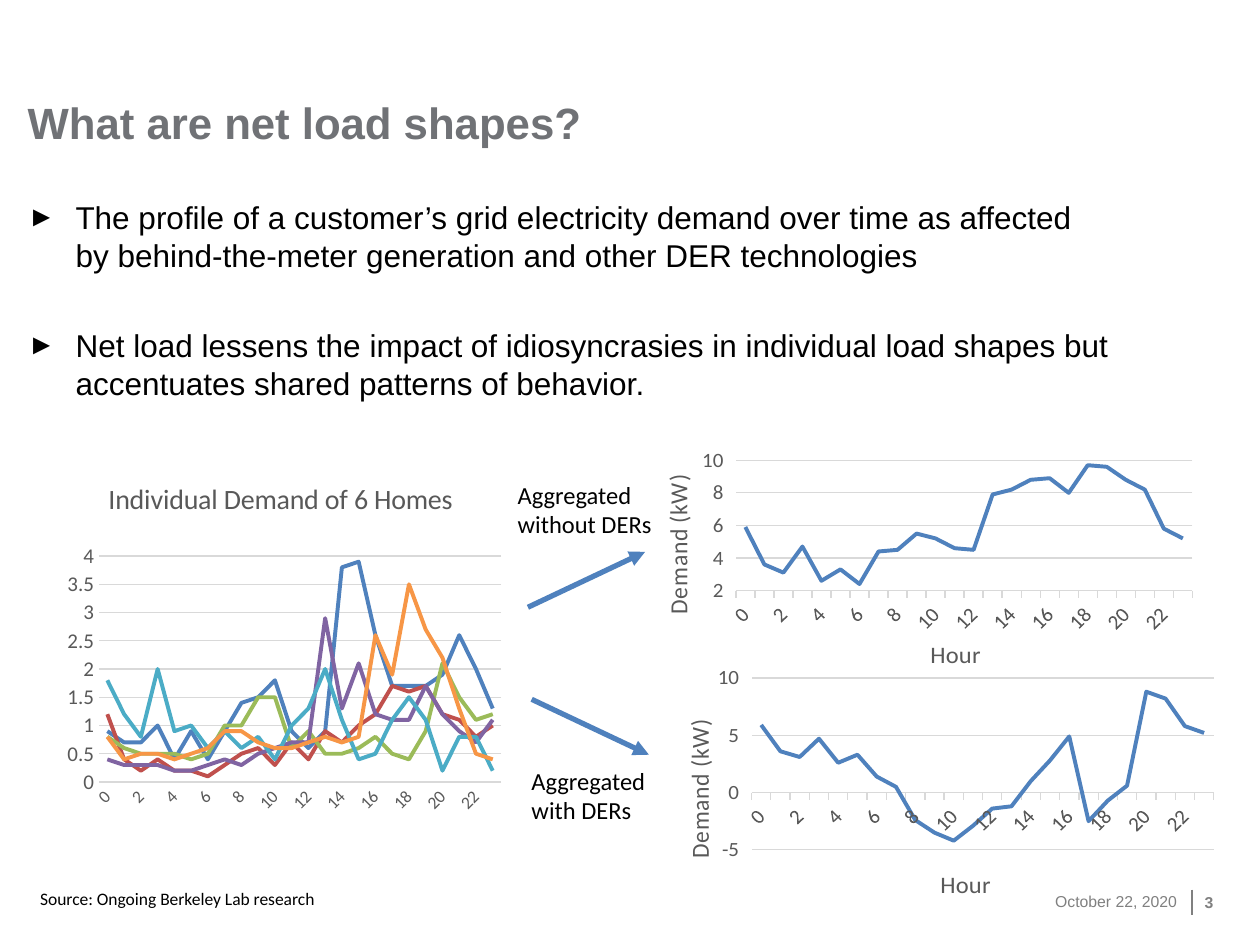
from lxml import etree
from pptx import Presentation
from pptx.chart.data import CategoryChartData
from pptx.dml.color import RGBColor
from pptx.enum.chart import XL_CHART_TYPE, XL_TICK_MARK
from pptx.enum.text import MSO_ANCHOR, PP_ALIGN
from pptx.oxml.ns import qn
from pptx.util import Inches, Pt

BLACK = RGBColor(0x00, 0x00, 0x00)
TITLE_GRAY = RGBColor(0x70, 0x72, 0x76)
FOOTER_GRAY = RGBColor(0x80, 0x80, 0x80)
AXIS_GRAY = RGBColor(0x59, 0x59, 0x59)
GRID_GRAY = RGBColor(0xD9, 0xD9, 0xD9)
BLUE = RGBColor(0x4F, 0x81, 0xBD)
SERIES_COLORS = [BLUE, RGBColor(0xC0, 0x50, 0x4D), RGBColor(0x9B, 0xBB, 0x59),
                 RGBColor(0x80, 0x64, 0xA2), RGBColor(0x4B, 0xAC, 0xC6),
                 RGBColor(0xF7, 0x96, 0x46)]

HOMES = [
    [0.9, 0.7, 0.7, 1, 0.4, 0.9, 0.4, 0.9, 1.4, 1.5, 1.8, 0.9,
     0.6, 0.9, 3.8, 3.9, 2.6, 1.7, 1.7, 1.7, 1.9, 2.6, 2, 1.3],
    [1.2, 0.4, 0.2, 0.4, 0.2, 0.2, 0.1, 0.3, 0.5, 0.6, 0.3, 0.7,
     0.4, 0.9, 0.7, 1, 1.2, 1.7, 1.6, 1.7, 1.2, 1.1, 0.8, 1],
    [0.8, 0.6, 0.5, 0.5, 0.5, 0.4, 0.5, 1, 1, 1.5, 1.5, 0.6,
     0.9, 0.5, 0.5, 0.6, 0.8, 0.5, 0.4, 0.9, 2.1, 1.5, 1.1, 1.2],
    [0.4, 0.3, 0.3, 0.3, 0.2, 0.2, 0.3, 0.4, 0.3, 0.5, 0.6, 0.7,
     0.7, 2.9, 1.3, 2.1, 1.2, 1.1, 1.1, 1.7, 1.2, 0.9, 0.7, 1.1],
    [1.8, 1.2, 0.8, 2, 0.9, 1, 0.6, 0.9, 0.6, 0.8, 0.4, 1,
     1.3, 2, 1.1, 0.4, 0.5, 1.1, 1.5, 1.1, 0.2, 0.8, 0.8, 0.2],
    [0.8, 0.4, 0.5, 0.5, 0.4, 0.5, 0.6, 0.9, 0.9, 0.7, 0.6, 0.6,
     0.7, 0.8, 0.7, 0.8, 2.6, 1.9, 3.5, 2.7, 2.2, 1.3, 0.5, 0.4],
]
WITHOUT_DERS = [5.9, 3.6, 3.1, 4.7, 2.6, 3.3, 2.4, 4.4, 4.5, 5.5, 5.2, 4.6,
                4.5, 7.9, 8.2, 8.8, 8.9, 8, 9.7, 9.6, 8.8, 8.2, 5.8, 5.2]
WITH_DERS = [5.9, 3.6, 3.1, 4.7, 2.6, 3.3, 1.4, 0.5, -2.4, -3.5, -4.2, -2.9,
             -1.4, -1.2, 1, 2.8, 4.9, -2.5, -0.7, 0.6, 8.8, 8.2, 5.8, 5.2]

deck = Presentation()
deck.slide_width, deck.slide_height = Inches(10), Inches(7.5)
page = deck.slides.add_slide(deck.slide_layouts[6])


def add_text(place, text, size, font="Arial", color=BLACK, bold=False,
             anchor=MSO_ANCHOR.TOP, inset=(0, 0), wrap=True):
    box = page.shapes.add_textbox(*[Inches(n) for n in place])
    frame = box.text_frame
    frame.text = text
    frame.word_wrap = wrap
    frame.vertical_anchor = anchor
    frame.margin_left = frame.margin_right = Inches(inset[0])
    frame.margin_top = frame.margin_bottom = Inches(inset[1])
    for para in frame.paragraphs:
        for span in para.runs:
            span.font.name, span.font.size = font, Pt(size)
            span.font.bold, span.font.color.rgb = bold, color
    return frame


def set_layout(parent, index, **values):
    """Give a chart part a manual layout in fractions of the chart."""
    for old in parent.findall(qn("c:layout")):
        parent.remove(old)
    layout = etree.Element(qn("c:layout"))
    manual = etree.SubElement(layout, qn("c:manualLayout"))
    for name, value in values.items():
        etree.SubElement(manual, qn("c:" + name)).set("val", str(value))
    parent.insert(index, layout)


# Footer: date, divider, page number
date = add_text((8.03, 6.95, 1.31, 0.4), "October 22, 2020", 9,
                color=FOOTER_GRAY, anchor=MSO_ANCHOR.MIDDLE)
date.paragraphs[0].alignment = PP_ALIGN.RIGHT
add_text((9.56, 6.96, 0.25, 0.4), "3", 9, color=FOOTER_GRAY, bold=True,
         anchor=MSO_ANCHOR.MIDDLE)

# Title and bullets
add_text((0.22, 0.3, 7.3, 0.88), "What are net load shapes?", 25,
         color=TITLE_GRAY, bold=True, anchor=MSO_ANCHOR.BOTTOM)
body = add_text(
    (0.22, 1.57, 9.47, 1.7),
    "The profile of a customer’s grid electricity demand over time as affected "
    "\vby behind-the-meter generation and other DER technologies\n"
    "Net load lessens the impact of idiosyncrasies in individual load shapes "
    "but accentuates shared patterns of behavior.", 18)
body.paragraphs[1].space_before = Pt(30)
for para in body.paragraphs:
    props = para._p.get_or_add_pPr()
    props.set("marL", str(Inches(0.38)))
    props.set("indent", str(-Inches(0.38)))
    etree.SubElement(props, qn("a:buSzPct")).set("val", "90000")
    etree.SubElement(props, qn("a:buFont")).set("typeface", "Arial")
    etree.SubElement(props, qn("a:buChar")).set("char", "►")

# Charts: place, series, plot area, value range and step, hour label size,
# ticks, and each title with its left and top on the slide
CHARTS = [
    ((0.33, 3.62, 3.8, 2.94), HOMES, (0.12, 0.27, 0.84, 0.61), (0, 4, 0.5), 10,
     XL_TICK_MARK.NONE,
     {"chart": ("Individual Demand of 6 Homes", 0.82, 3.77)}),
    ((5.07, 3.49, 4.53, 1.88), [WITHOUT_DERS], (0.17, 0.09, 0.8, 0.57),
     (2, 10, 2), 12, XL_TICK_MARK.OUTSIDE,
     {"hours": ("Hour", 7.35, 5.08), "demand": ("Demand (kW)", 5.21, 3.78)}),
    ((5.24, 5.23, 4.53, 1.97), [WITH_DERS], (0.16, 0.08, 0.81, 0.72),
     (-5, 10, 5), 12, XL_TICK_MARK.OUTSIDE,
     {"hours": ("Hour", 7.43, 6.92), "demand": ("Demand (kW)", 5.38, 5.73)}),
]
for place, series, plot, (low, high, step), hour_size, tick, titles in CHARTS:
    data = CategoryChartData()
    data.categories = [str(hour) for hour in range(24)]
    for number, values in enumerate(series, 1):
        data.add_series(f"Series {number}", values)
    chart = page.shapes.add_chart(
        XL_CHART_TYPE.LINE, *[Inches(n) for n in place], data).chart
    chart.has_legend = chart.has_title = False
    chart.font.name, chart.font.size = "Calibri", Pt(10)
    for line, color in zip(chart.plots[0].series, SERIES_COLORS):
        line.smooth = False
        line.format.line.color.rgb, line.format.line.width = color, Pt(2.25)

    hours, demand = chart.category_axis, chart.value_axis
    for axis, size in ((hours, hour_size), (demand, 12)):
        axis.major_tick_mark, axis.minor_tick_mark = tick, XL_TICK_MARK.NONE
        font = axis.tick_labels.font
        font.name, font.size, font.color.rgb = "Calibri", Pt(size), AXIS_GRAY
    demand.minimum_scale, demand.maximum_scale = low, high
    demand.major_unit = step
    demand.format.line.fill.background()
    for rule in (hours.format.line, demand.major_gridlines.format.line):
        rule.color.rgb, rule.width = GRID_GRAY, Pt(0.75)

    # Slanted label at every second hour
    hours._element.find(f"{qn('c:txPr')}/{qn('a:bodyPr')}").set("rot", "-2700000")
    skip = etree.Element(qn("c:tickLblSkip"))
    skip.set("val", "2")
    hours._element.find(qn("c:noMultiLvlLbl")).addprevious(skip)

    left, top, width, height = place
    owners = {"chart": chart, "hours": hours, "demand": demand}
    for key, (text, title_left, title_top) in titles.items():
        owner = owners[key]
        title = chart.chart_title if key == "chart" else owner.axis_title
        title.text_frame.text = text
        font = title.text_frame.paragraphs[0].runs[0].font
        font.name, font.bold, font.color.rgb = "Calibri", False, AXIS_GRAY
        font.size = Pt(16 if key == "chart" else 14)
        if key == "demand":
            title.text_frame._txBody.find(qn("a:bodyPr")).set("rot", "-5400000")
        set_layout(title._element, 1, xMode="edge", yMode="edge",
                   x=round((title_left - left) / width, 3),
                   y=round((title_top - top) / height, 3))
    set_layout(chart._chartSpace.chart.plotArea, 0, layoutTarget="inner",
               xMode="edge", yMode="edge", **dict(zip("xywh", plot)))

# Arrow captions and source
for place, text, size in [
        ((4.01, 3.76, 1.28, 0.57), "Aggregated\nwithout DERs", 14),
        ((4.12, 6.03, 1.37, 0.57), "Aggregated\nwith DERs", 14),
        ((0.22, 7, 2.42, 0.27), "Source: Ongoing Berkeley Lab research", 10)]:
    add_text(place, text, size, "Calibri", inset=(0.1, 0.05), wrap=False)

# Footer divider and the two arrows
for ends, color, width, has_arrow in [
        ((9.46, 7.06, 9.46, 7.26), FOOTER_GRAY, 1, False),
        ((4.19, 4.82, 5.12, 4.38), BLUE, 3, True),
        ((4.22, 5.55, 5.15, 5.99), BLUE, 3, True)]:
    connector = page.shapes.add_connector(1, *[Inches(n) for n in ends])
    connector.line.color.rgb, connector.line.width = color, Pt(width)
    if has_arrow:
        head = etree.SubElement(connector.line._get_or_add_ln(), qn("a:tailEnd"))
        head.set("type", "triangle")
    etree.SubElement(connector._element.spPr, qn("a:effectLst"))

deck.save("out.pptx")
